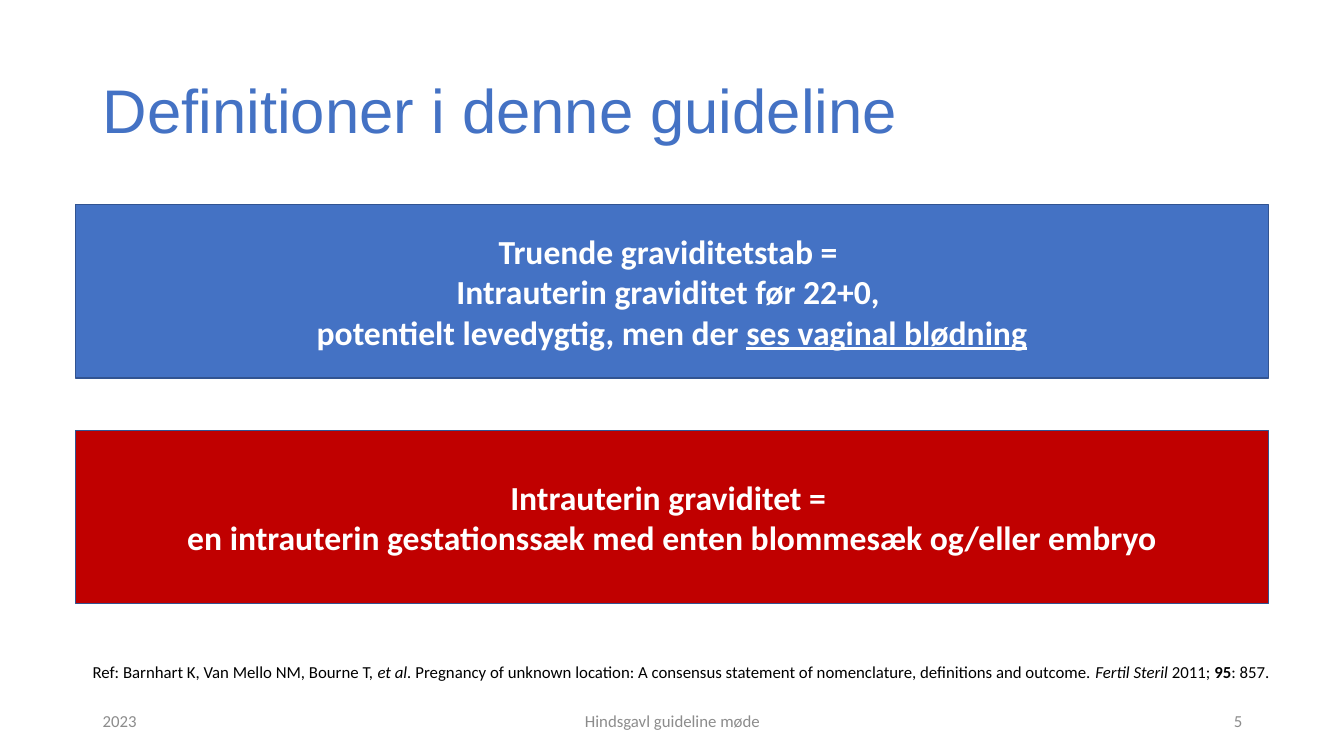
from pptx import Presentation
from pptx.dml.color import RGBColor
from pptx.enum.shapes import MSO_SHAPE
from pptx.enum.text import MSO_ANCHOR, MSO_AUTO_SIZE, PP_ALIGN
from pptx.util import Inches, Pt

BLUE, RED, OUTLINE = "4472C4", "C00000", "325491"
WHITE, BLACK, GREY = "FFFFFF", "000000", "8C8C8C"


def color(hex_value):
    return RGBColor.from_string(hex_value)


class GuidelineSlide:
    body_font = "Calibri"
    title_font = "Arial"

    def __init__(self, presentation):
        self.slide = presentation.slides.add_slide(presentation.slide_layouts[5])

    def fill_frame(self, frame, paragraphs, size, hex_value, align=PP_ALIGN.LEFT,
                   anchor=MSO_ANCHOR.MIDDLE, font=body_font, **common):
        """Fill a frame; each paragraph is a list of (text, format) runs."""
        frame.word_wrap = True
        frame.auto_size = MSO_AUTO_SIZE.NONE
        frame.vertical_anchor = anchor
        for index, runs in enumerate(paragraphs):
            paragraph = frame.add_paragraph() if index else frame.paragraphs[0]
            paragraph.alignment = align
            for text, emphasis in runs:
                run = paragraph.add_run()
                run.text = text
                run.font.color.rgb = color(hex_value)
                style = {"name": font, "size": Pt(size), **common, **emphasis}
                for name, value in style.items():
                    setattr(run.font, name, value)

    def title(self, text, left, top, width, height):
        heading = self.slide.shapes.title
        place = {"left": left, "top": top, "width": width, "height": height}
        for name, value in place.items():
            setattr(heading, name, Inches(value))
        self.fill_frame(heading.text_frame, [[(text, {})]], 44, BLUE,
                        font=self.title_font)
        heading.text_frame.paragraphs[0].line_spacing = 0.9

    def text(self, paragraphs, left, top, width, height, hex_value, **layout):
        box = self.slide.shapes.add_textbox(*map(Inches, (left, top, width, height)))
        self.fill_frame(box.text_frame, paragraphs, 12, hex_value, **layout)

    def definition(self, paragraphs, top, fill):
        panel = self.slide.shapes.add_shape(
            MSO_SHAPE.RECTANGLE, *map(Inches, (0.75, top, 11.83, 1.72)))
        panel.shadow.inherit = False
        panel.fill.solid()
        panel.fill.fore_color.rgb = color(fill)
        panel.line.color.rgb = color(OUTLINE)
        panel.line.width = Pt(1)
        self.fill_frame(panel.text_frame, paragraphs, 24, WHITE,
                        align=PP_ALIGN.CENTER, bold=True)


def main():
    presentation = Presentation()
    presentation.slide_width = Inches(13.33)
    presentation.slide_height = Inches(7.5)
    page = GuidelineSlide(presentation)

    page.title("Definitioner i denne guideline", 0.92, 0.4, 11.5, 1.45)

    footers = [
        ("2023", 0.92, 3, PP_ALIGN.LEFT),
        ("Hindsgavl guideline møde", 4.42, 4.5, PP_ALIGN.CENTER),
        ("5", 9.42, 3, PP_ALIGN.RIGHT),
    ]
    for footer, left, width, align in footers:
        page.text([[(footer, {})]], left, 6.95, width, 0.4, GREY, align=align)

    threatened_loss = [
        [("Truende graviditetstab = ", {})],
        [("Intrauterin graviditet før 22+0, ", {})],
        [("potentielt levedygtig, men der ", {}),
         ("ses vaginal blødning", {"underline": True})],
    ]
    intrauterine = [
        [("Intrauterin graviditet = ", {})],
        [("en intrauterin gestationssæk med enten blommesæk og/eller embryo", {})],
    ]
    page.definition(threatened_loss, 2.03, BLUE)
    page.definition(intrauterine, 4.27, RED)

    reference = [
        ("Ref: Barnhart K, Van Mello NM, Bourne T, ", {}),
        ("et al. ", {"italic": True}),
        ("Pregnancy of unknown location: A consensus statement of "
         "nomenclature, definitions and outcome. ", {}),
        ("Fertil Steril", {"italic": True}),
        (" 2011; ", {}),
        ("95", {"bold": True}),
        (": 857.", {}),
    ]
    page.text([reference], 0.82, 6.52, 12.31, 0.61, BLACK, anchor=MSO_ANCHOR.TOP)

    presentation.save("out.pptx")


if __name__ == "__main__":
    main()
